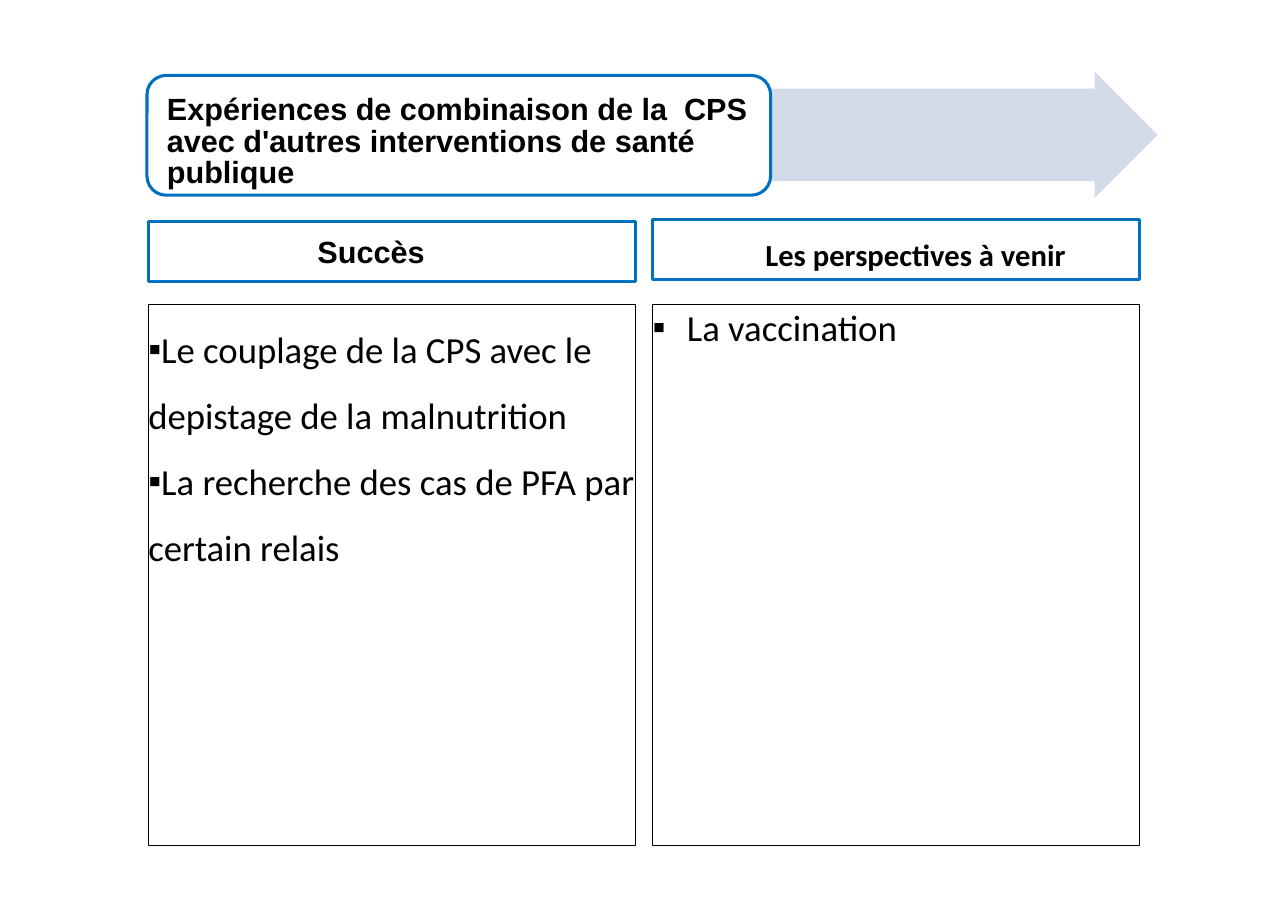
import pptx
import pptx.util
import pptx.dml.color
import pptx.enum.shapes
import pptx.enum.text
import pptx.oxml
import pptx.oxml.ns

Cm = pptx.util.Cm
Pt = pptx.util.Pt
RGB = pptx.dml.color.RGBColor
KIND = pptx.enum.shapes.MSO_SHAPE
ENUM = pptx.enum.text

BLACK = RGB(0x00, 0x00, 0x00)
WHITE = RGB(0xFF, 0xFF, 0xFF)
BLUE = RGB(0x00, 0x70, 0xBF)
PALE = RGB(0xCF, 0xD8, 0xE8)

TITLE = {"name": "Arial", "size": Pt(20), "bold": True}
LABEL = {"name": "Calibri", "size": Pt(20), "bold": True}
BODY = {"name": "Calibri", "size": Pt(24), "bold": False}


def put(obj, form):
    for key, val in form.items():
        setattr(obj, key, val)


def block(slide, kind, box, fill=None, line=None, width=2):
    shape = slide.shapes.add_shape(kind, *[Cm(n) for n in box])
    shape.shadow.inherit = False
    for part, color in ((shape.fill, fill), (shape.line.fill, line)):
        if color is None:
            part.background()
        else:
            part.solid()
            part.fore_color.rgb = color
    if line is not None:
        shape.line.width = Pt(width)
    return shape


def write(shape, texts, font, left=0, top=0, space=1.0):
    frame = shape.text_frame
    put(frame, {"word_wrap": True,
                "vertical_anchor": ENUM.MSO_ANCHOR.TOP,
                "margin_left": Cm(left), "margin_top": Cm(top),
                "margin_right": 0, "margin_bottom": 0})
    for i, text in enumerate(texts):
        para = frame.add_paragraph() if i else frame.paragraphs[0]
        put(para, {"alignment": ENUM.PP_ALIGN.LEFT, "line_spacing": space})
        run = para.add_run()
        run.text = text
        put(run.font, font)
        run.font.color.rgb = BLACK


def bullet(shape, hang):
    for para in shape.text_frame.paragraphs:
        props = para._p.get_or_add_pPr()
        props.set("marL", str(Cm(hang)))
        props.set("indent", str(-Cm(hang)))
        for tag, key, val in (("a:buFont", "typeface", "Arial"),
                              ("a:buChar", "char", "▪")):
            item = pptx.oxml.parse_xml(
                f'<{tag} {pptx.oxml.ns.nsdecls("a")} {key}="{val}"/>')
            props.append(item)


def banner(slide, x, y, text):
    # Pale arrow behind the title
    arrow = block(slide, KIND.RIGHT_ARROW, (x + 14.34, y - 0.09, 8.97, 2.92),
                  PALE)
    arrow.adjustments[0] = 0.73
    arrow.adjustments[1] = 0.5
    color = arrow.fill._xPr.find(".//" + pptx.oxml.ns.qn("a:srgbClr"))
    color.append(pptx.oxml.parse_xml(
        f'<a:alpha {pptx.oxml.ns.nsdecls("a")} val="90000"/>'))
    # Title card
    card = block(slide, KIND.ROUNDED_RECTANGLE, (x, y, 14.38, 2.76),
                 WHITE, BLUE)
    card.adjustments[0] = 0.16
    write(card, [text], TITLE, 0.33, 0.33, 0.86)


def column(slide, x, y, w, head, points):
    # Heading
    rise, label, font, left, top = head
    bar = block(slide, KIND.RECTANGLE, (x, y - rise, w, 1.39), line=BLUE)
    write(bar, [label], font, left, top)
    # List
    texts, hang, space = points
    panel = block(slide, KIND.RECTANGLE, (x, y + 1.91, w, 12.48),
                  line=BLACK, width=0.75)
    write(panel, texts, BODY, space=space)
    bullet(panel, hang)


def main():
    deck = pptx.Presentation()
    put(deck, {"slide_width": Cm(29.7), "slide_height": Cm(21)})
    slide = deck.slides.add_slide(deck.slide_layouts[6])
    banner(slide, 3.39, 1.74,
           "Expériences de combinaison de la  CPS avec d'autres "
           "interventions de santé publique")
    columns = (
        ((0, "Succès", TITLE, 3.9, 0.25),
         (["Le couplage de la CPS avec le depistage de la malnutrition",
           "La recherche des cas de PFA par certain relais"], 0, 1.5)),
        ((0.05, "Les perspectives à venir", LABEL, 2.6, 0.38),
         (["La vaccination"], 0.79, 1.0)),
    )
    wide, gap = 11.23, 0.4
    for i, (head, points) in enumerate(columns):
        column(slide, 3.42 + i * (wide + gap), 5.11, wide, head, points)
    deck.save("out.pptx")


if __name__ == "__main__":
    main()
